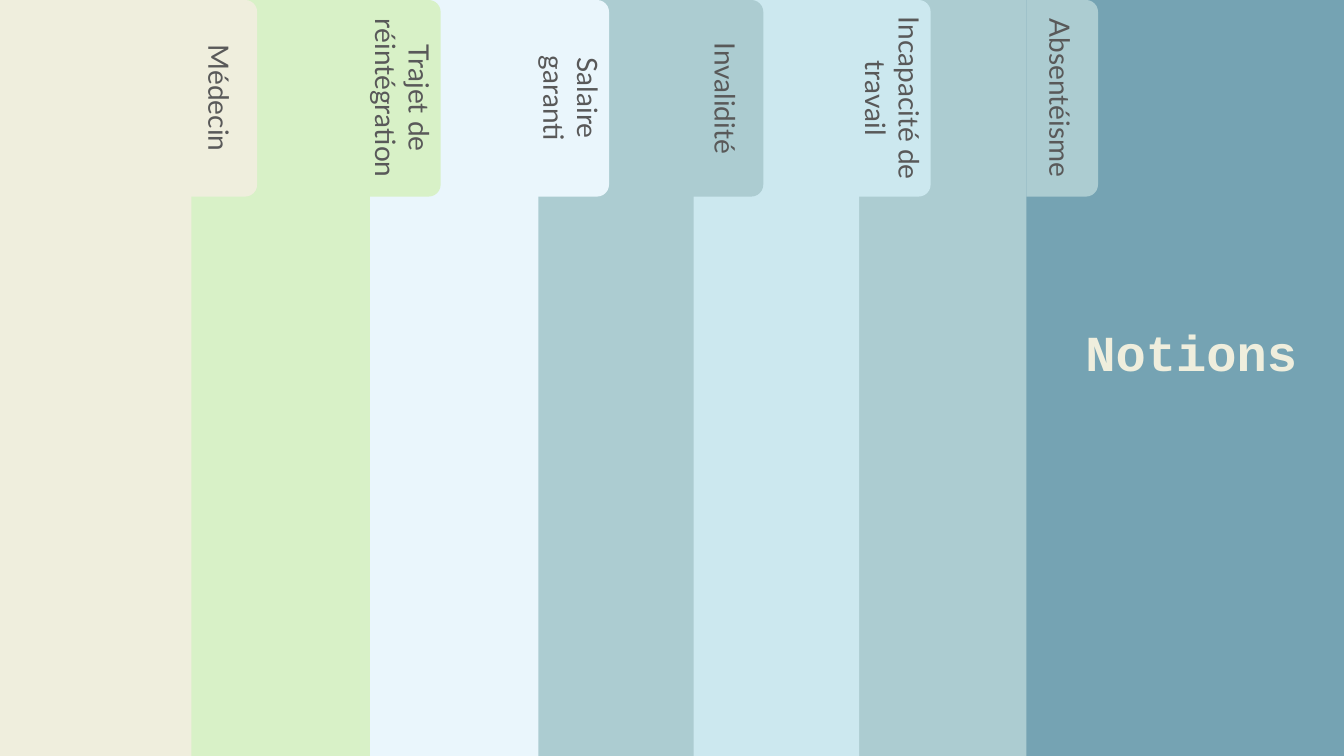
import pptx
import pptx.util
import pptx.dml.color
import pptx.enum.shapes
import pptx.enum.text

Inches = pptx.util.Inches
RGBColor = pptx.dml.color.RGBColor
MSO_SHAPE = pptx.enum.shapes.MSO_SHAPE

BLUE = RGBColor(0x75, 0xA3, 0xB3)
TEAL = RGBColor(0xAC, 0xCC, 0xD1)
AQUA = RGBColor(0xCC, 0xE8, 0xEF)
ICE = RGBColor(0xEA, 0xF6, 0xFC)
GREEN = RGBColor(0xD8, 0xF1, 0xC7)
CREAM = RGBColor(0xEF, 0xEE, 0xDD)
GREY = RGBColor(0x59, 0x59, 0x59)

TAB_LENGTH, TAB_DEPTH = 1.95, 0.71

prs = pptx.Presentation()
prs.slide_width = Inches(13.33)
prs.slide_height = Inches(7.5)
s = prs.slides.add_slide(prs.slide_layouts[6])
s.background.fill.solid()
s.background.fill.fore_color.rgb = BLUE


def add_filled(shapes, kind, left, top, width, height, color):
    sp = shapes.add_shape(kind, Inches(left), Inches(top), Inches(width), Inches(height))
    sp.shadow.inherit = False
    sp.fill.solid()
    sp.fill.fore_color.rgb = color
    sp.line.fill.background()
    return sp


def set_text(sp, text, font, size, color, bold=False):
    p = sp.text_frame.paragraphs[0]
    p.text = text
    p.alignment = pptx.enum.text.PP_ALIGN.CENTER
    r = p.runs[0]
    r.font.name = font
    r.font.size = pptx.util.Pt(size)
    r.font.bold = bold
    r.font.color.rgb = color


panels = [
    ("Absentéisme", 10.18, 9.56, TEAL),
    ("Incapacité de travail", 8.52, 7.9, AQUA),
    ("Invalidité", 6.88, 6.24, TEAL),
    ("Salaire garanti", 5.34, 4.71, ICE),
    ("Trajet de réintégration", 3.67, 3.04, GREEN),
    ("Médecin", 1.9, 1.22, CREAM),
]
for label, panel_width, tab_left, color in panels:
    group = s.shapes.add_group_shape()
    add_filled(group.shapes, MSO_SHAPE.RECTANGLE, 0, 0, panel_width, 7.5, color)
    tab = add_filled(group.shapes, MSO_SHAPE.ROUND_2_SAME_RECTANGLE,
                     tab_left, (TAB_LENGTH - TAB_DEPTH) / 2, TAB_LENGTH, TAB_DEPTH, color)
    tab.rotation = 90
    tab.text_frame.word_wrap = True
    tab.text_frame.vertical_anchor = pptx.enum.text.MSO_ANCHOR.MIDDLE
    set_text(tab, label, "Lato", 20, GREY)

title = s.shapes.add_textbox(Inches(10.66), Inches(3.14), Inches(2.31), Inches(0.71))
title.text_frame.word_wrap = False
title.text_frame.auto_size = pptx.enum.text.MSO_AUTO_SIZE.SHAPE_TO_FIT_TEXT
set_text(title, "Notions", "Courier New", 36, CREAM, bold=True)

prs.save("out.pptx")
